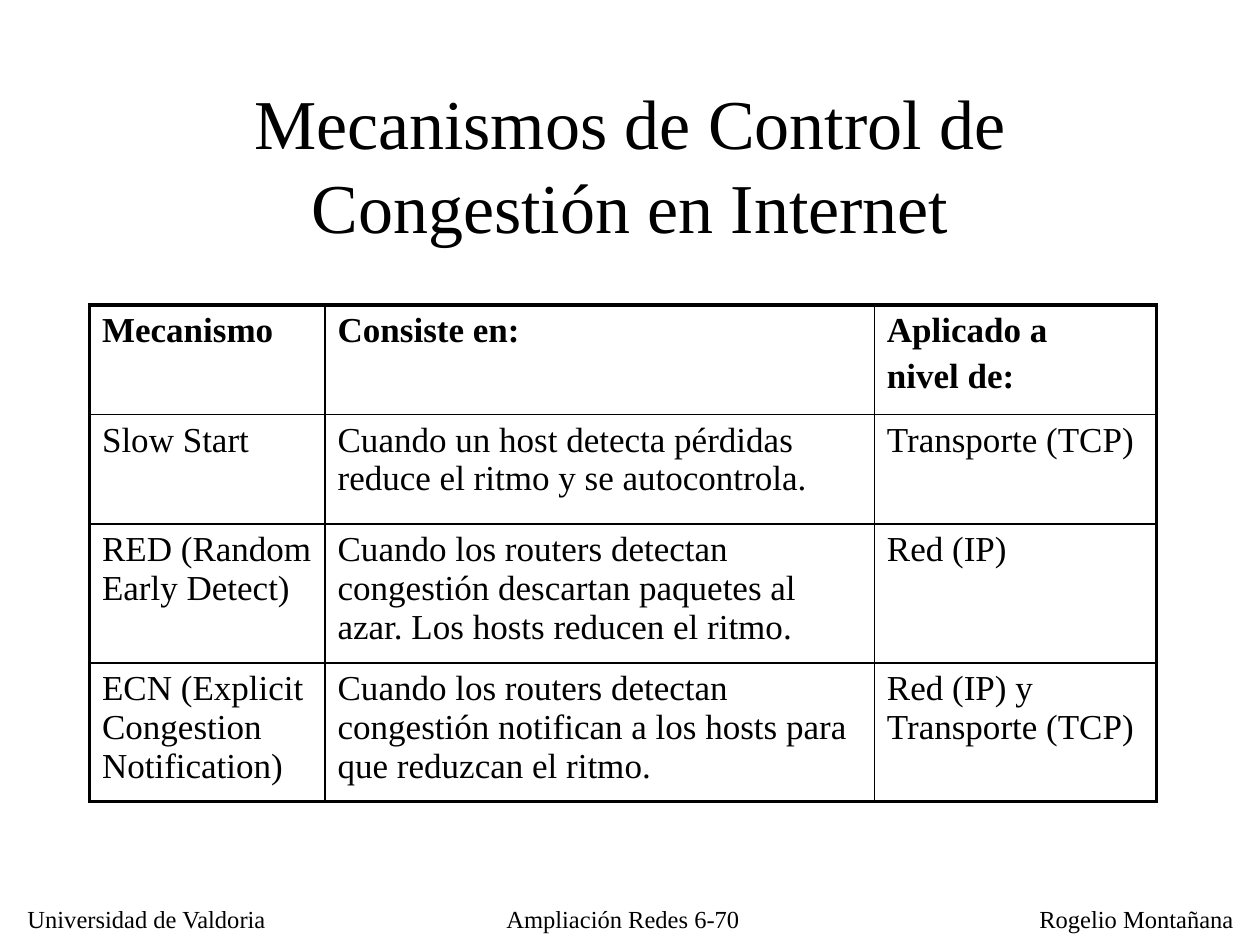
import pptx
import pptx.dml.color
import pptx.enum.text
import pptx.oxml.ns
import pptx.util
from lxml import etree

WIDTH, HEIGHT = 10, 7.5
FONT, BLACK, WHITE = "Times New Roman", "000000", "FFFFFF"
THIN, THICK = 1, 2.25
ALIGN = pptx.enum.text.PP_ALIGN
ANCHOR = pptx.enum.text.MSO_ANCHOR

TITLE = "Mecanismos de Control de Congestión en Internet"
COLUMNS = [1.87, 4.36, 2.24]
ROWS = [0.87, 0.87, 1.03, 1.03]
MECHANISMS = [
    ["Mecanismo", "Consiste en:", "Aplicado a\nnivel de:"],
    ["Slow Start",
     "Cuando un host detecta pérdidas reduce el ritmo y se autocontrola.",
     "Transporte (TCP)"],
    ["RED (Random Early Detect)",
     "Cuando los routers detectan congestión descartan paquetes al azar. "
     "Los hosts reducen el ritmo.",
     "Red (IP)"],
    ["ECN (Explicit Congestion Notification)",
     "Cuando los routers detectan congestión notifican a los hosts para "
     "que reduzcan el ritmo.",
     "Red (IP) y Transporte (TCP)"],
]


def color(value):
    """Turn a hex string into a colour."""
    return pptx.dml.color.RGBColor.from_string(value)


def inches(*values):
    """Turn numbers into lengths in inches."""
    return [pptx.util.Inches(value) for value in values]


def style(frame, size, align=ALIGN.LEFT, bold=False):
    """Format every paragraph and run of a text frame."""
    for index, para in enumerate(frame.paragraphs):
        para.alignment = align
        if index:
            para.space_before = pptx.util.Pt(size * 0.2)
        for span in para.runs:
            span.font.name = FONT
            span.font.size = pptx.util.Pt(size)
            span.font.bold = bold
            span.font.color.rgb = color(BLACK)


def add_text(page, box, text, size, align=ALIGN.LEFT, anchor=ANCHOR.TOP, wrap=True):
    """Place a text box in the given box."""
    frame = page.shapes.add_textbox(*inches(*box)).text_frame
    frame.word_wrap = wrap
    frame.vertical_anchor = anchor
    frame.text = text
    style(frame, size, align)


def add_border(cell, side, width):
    """Draw one side of a cell as a solid line."""
    qn = pptx.oxml.ns.qn
    line = etree.SubElement(cell._tc.get_or_add_tcPr(), qn(f"a:ln{side}"),
                            w=str(pptx.util.Pt(width)))
    fill = etree.SubElement(line, qn("a:solidFill"))
    etree.SubElement(fill, qn("a:srgbClr"), val=BLACK)


def add_mechanisms(page, left, top):
    """Place the table of mechanisms with a thick outer frame."""
    box = inches(left, top, sum(COLUMNS), sum(ROWS))
    table = page.shapes.add_table(len(ROWS), len(COLUMNS), *box).table
    for column, width in zip(table.columns, inches(*COLUMNS)):
        column.width = width
    for row, height in zip(table.rows, inches(*ROWS)):
        row.height = height
    for r, texts in enumerate(MECHANISMS):
        for c, text in enumerate(texts):
            cell = table.cell(r, c)
            cell.text_frame.text = text
            style(cell.text_frame, 20, bold=r == 0)
            outer = {"L": c == 0, "R": c == len(COLUMNS) - 1,
                     "T": r == 0, "B": r == len(ROWS) - 1}
            for side, is_outer in outer.items():
                add_border(cell, side, THICK if is_outer else THIN)
            cell.fill.background()


def add_footer(page, top):
    """Place the three footer texts along one line."""
    add_text(page, (0.12, top, 2.13, 0.33), "Universidad de Valdoria", 14, wrap=False)
    add_text(page, (3.43, top, 3.03, 0.38), "Ampliación Redes 6-70", 14, ALIGN.CENTER)
    add_text(page, (8.15, top, 1.74, 0.33), "Rogelio Montañana", 14, wrap=False)


def main():
    """Build and save the deck."""
    deck = pptx.Presentation()
    deck.slide_width, deck.slide_height = inches(WIDTH, HEIGHT)
    page = deck.slides.add_slide(deck.slide_layouts[6])
    page.background.fill.solid()
    page.background.fill.fore_color.rgb = color(WHITE)
    add_footer(page, HEIGHT * 0.95)
    add_text(page, (0.75, 0.67, WIDTH * 0.85, 1.25), TITLE, 40,
             ALIGN.CENTER, ANCHOR.MIDDLE)
    add_mechanisms(page, 0.71, 2.42)
    deck.save("out.pptx")


if __name__ == "__main__":
    main()
